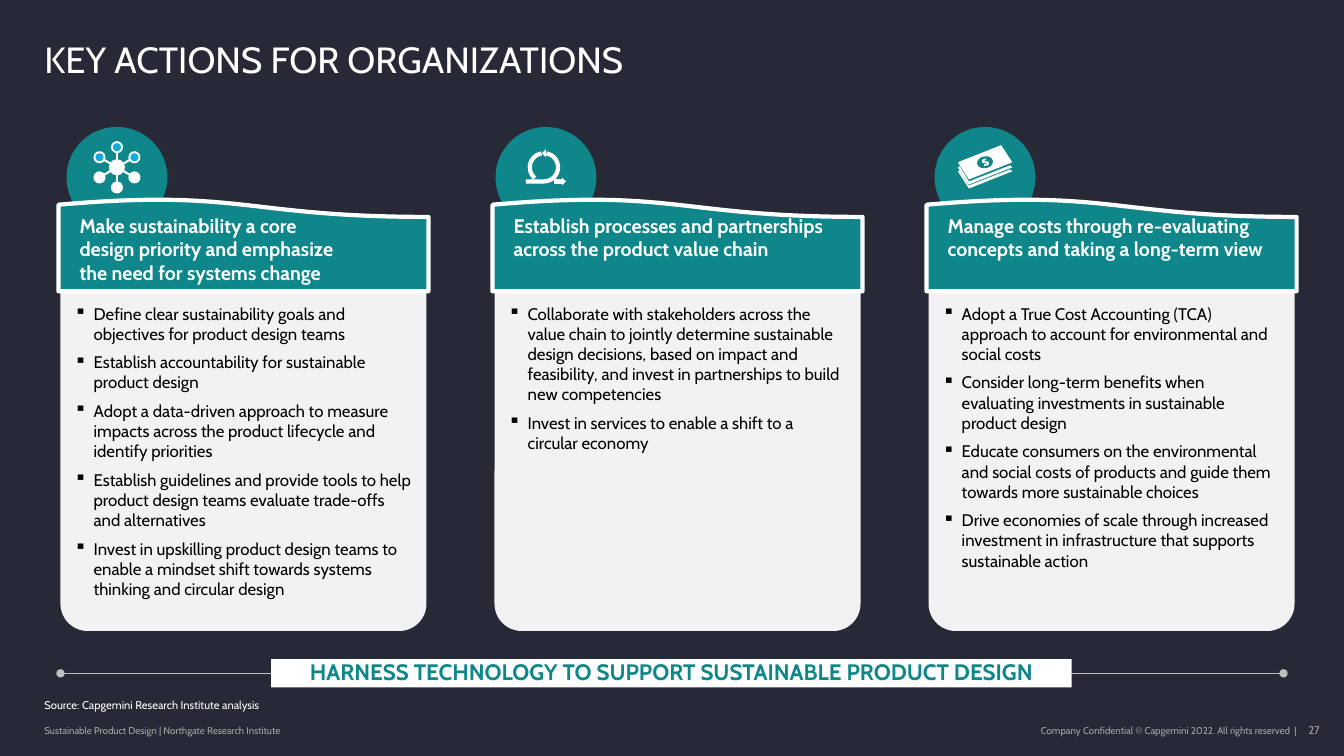
import math
from dataclasses import dataclass

from lxml import etree
from pptx import Presentation
from pptx.dml.color import RGBColor
from pptx.enum import shapes as kinds, text as txt
from pptx.oxml import ns
from pptx.util import Inches, Pt


@dataclass(frozen=True)
class Theme:
    """Colours, font and type sizes of the slide."""
    font: str = "Cabin"
    night: str = "272936"
    teal: str = "0F878A"
    sky: str = "12ABDB"
    white: str = "FFFFFF"
    panel: str = "F2F2F2"
    ink: str = "000000"
    rule: str = "BFBFBF"
    muted: str = "A6A6A6"
    title: int = 26
    banner: int = 16
    heading: int = 14
    body: int = 12
    small: int = 8
    footer: int = 7


THEME = Theme()
SHAPE, ALIGN, ANCHOR = kinds.MSO_SHAPE, txt.PP_ALIGN, txt.MSO_ANCHOR


def rgb(value):
    """Turn a hex string into a colour."""
    return RGBColor.from_string(value)


def paint(shape, fill=None, line=None, width=1):
    """Set the fill and outline of a shape and remove its shadow."""
    shape.shadow.inherit = False
    if fill:
        shape.fill.solid()
        shape.fill.fore_color.rgb = rgb(fill)
    else:
        shape.fill.background()
    if line:
        shape.line.color.rgb = rgb(line)
        shape.line.width = Pt(width)
    else:
        shape.line.fill.background()
    return shape


def preset(slide, kind, box, fill, line=None, width=1):
    """Add a painted preset shape in a box given in inches."""
    return paint(slide.shapes.add_shape(kind, *map(Inches, box)), fill, line, width)


def disc(slide, x, y, radius, fill):
    """Add a circle around a centre."""
    return preset(slide, SHAPE.OVAL, (x - radius, y - radius, 2 * radius, 2 * radius), fill)


def outline(slide, x, y, points, fill=None, line=None, width=1):
    """Add a filled polygon or an open stroke through points around a centre."""
    corners = [(Inches(x + dx), Inches(y + dy)) for dx, dy in points]
    builder = slide.shapes.build_freeform(*corners[0])
    builder.add_line_segments(corners[1:], close=fill is not None)
    return paint(builder.convert_to_shape(), fill, line, width)


def segment(slide, start, end, color, width):
    """Add a straight line without shadow."""
    line = slide.shapes.add_connector(
        kinds.MSO_CONNECTOR.STRAIGHT, *map(Inches, (*start, *end)))
    line.line.color.rgb = rgb(color)
    line.line.width = Pt(width)
    etree.SubElement(line._element.spPr, ns.qn("a:effectLst"))
    return line


def write(shape, paragraphs, size, color, bold=False, align=ALIGN.LEFT, anchor=ANCHOR.TOP,
          insets=(0, 0, 0, 0), spacing=None, after=0, bullet=None):
    """Fill a shape with paragraphs of one style."""
    frame = shape.text_frame
    frame.word_wrap = True
    frame.vertical_anchor = anchor
    (frame.margin_left, frame.margin_top,
     frame.margin_right, frame.margin_bottom) = map(Inches, insets)
    for index, content in enumerate(paragraphs):
        paragraph = frame.add_paragraph() if index else frame.paragraphs[0]
        paragraph.text = content
        paragraph.alignment = align
        paragraph.space_after = Pt(after)
        if spacing:
            paragraph.line_spacing = spacing
        if bullet:
            props = paragraph._p.get_or_add_pPr()
            props.set("marL", str(Inches(0.19)))
            props.set("indent", str(-Inches(0.19)))
            etree.SubElement(props, ns.qn("a:buChar")).set("char", bullet)
        font = paragraph.font
        font.name, font.size, font.bold = THEME.font, Pt(size), bold
        font.color.rgb = rgb(color)


def label(slide, box, paragraphs, size, color, **style):
    """Add a text box in a box given in inches."""
    write(slide.shapes.add_textbox(*map(Inches, box)), paragraphs, size, color, **style)


def network_icon(slide, x, y):
    """Draw a hub with six satellites, the upper three with a blue core."""
    for step in range(6):
        angle = math.radians(30 + 60 * step)
        node = x + 0.2 * math.cos(angle), y + 0.2 * math.sin(angle)
        segment(slide, (x, y), node, THEME.white, 1.5)
        disc(slide, *node, 0.06, THEME.white)
        if step >= 3:
            disc(slide, *node, 0.04, THEME.sky)
    disc(slide, x, y, 0.08, THEME.white)


def cycle_icon(slide, x, y):
    """Draw a loop with an arrow running out of its foot."""
    def arc(first, last):
        return [(0.14 * math.cos(math.radians(a)) - 0.02, 0.14 * math.sin(math.radians(a)))
                for a in range(first, last + 1, 10)]

    for stroke in (arc(130, 260), arc(-80, 90) + [(-0.2, 0.14)], [(0.08, 0.14), (0.16, 0.14)]):
        outline(slide, x, y, stroke, line=THEME.white, width=3)
    for tip, base, level in ((-0.04, 0, -0.14), (0.2, 0.16, 0.14)):
        head = [(tip, level), (base, level - 0.04), (base, level + 0.04)]
        outline(slide, x, y, head, fill=THEME.white)


def money_icon(slide, x, y):
    """Draw a tilted stack of banknotes."""
    note = [(0.16, -0.22), (0.27, -0.05), (-0.16, 0.12), (-0.27, -0.05)]
    edge = [(-0.27, 0), (-0.25, -0.01), (-0.16, 0.14), (0.25, -0.02), (0.27, 0), (-0.16, 0.17)]
    outline(slide, x, y, note, fill=THEME.white)
    for drop in (0, 0.04):
        outline(slide, x, y, [(dx, dy + drop) for dx, dy in edge], fill=THEME.white)
    coin = preset(slide, SHAPE.OVAL, (x - 0.08, y - 0.11, 0.16, 0.12), THEME.teal)
    coin.rotation = -10
    dollar = [(0.01, -0.08), (-0.02, -0.07), (-0.02, -0.05), (0.03, -0.05), (0.03, -0.03), (-0.01, -0.02)]
    outline(slide, x, y, dollar, line=THEME.white, width=1.25)


def action_card(slide, left, top, badge_offset, icon, heading, actions):
    """Draw one column: badge, panel with actions, wavy heading and icon."""
    center = left + badge_offset + 0.5, top + 0.5
    disc(slide, *center, 0.5, THEME.teal)
    panel = preset(slide, SHAPE.ROUND_2_SAME_RECTANGLE,
                   (left, top + 1.62, 3.63, 3.38), THEME.panel)
    panel.adjustments[0], panel.adjustments[1] = 0, 0.08
    label(slide, (left + 0.04, top + 1.7, 3.55, 3.2), actions, THEME.body, THEME.ink,
          insets=(0.1, 0.05, 0.1, 0.05), after=6, bullet="▪")
    wave = preset(slide, SHAPE.FLOWCHART_DOCUMENT,
                  (left - 0.02, top + 0.71, 3.67, 0.92), THEME.teal, THEME.white, 3)
    wave._element.spPr.find(ns.qn("a:xfrm")).set("flipV", "1")
    label(slide, (left + 0.09, top + 0.81, 3.52, 0.81), [heading], THEME.heading, THEME.white,
          bold=True, insets=(0.1, 0.05, 0.1, 0.05), after=6)
    icon(slide, center[0], center[1] - 0.1)


def banner(slide, left, top, width, message):
    """Draw the closing message on a rule with round ends."""
    rule = segment(slide, (left, top + 0.14), (left + width, top + 0.14), THEME.rule, 0.75)
    ends = rule.line._get_or_add_ln()
    for end in ("a:headEnd", "a:tailEnd"):
        etree.SubElement(ends, ns.qn(end)).set("type", "oval")
    plate = preset(slide, SHAPE.RECTANGLE, (left + 2.09, top, 7.94, 0.28), THEME.white)
    write(plate, [message], THEME.banner, THEME.teal, bold=True, align=ALIGN.CENTER,
          anchor=ANCHOR.MIDDLE, insets=(0.02,) * 4, spacing=0.9)


def footer(slide, left, top):
    """Write the source and the footer line."""
    label(slide, (left, top - 0.2, 12.46, 0.13), ["Source: Capgemini Research Institute analysis"],
          THEME.small, THEME.white, anchor=ANCHOR.BOTTOM)
    label(slide, (left, top, 3.73, 0.24), ["Sustainable Product Design | Northgate Research Institute"],
          THEME.footer, THEME.muted, anchor=ANCHOR.MIDDLE)
    label(slide, (left + 7.46, top, 4.96, 0.24),
          ["Company Confidential © Capgemini 2022. All rights reserved  |"],
          THEME.footer, THEME.muted, align=ALIGN.RIGHT, anchor=ANCHOR.MIDDLE)
    label(slide, (left + 12.4, top, 0.25, 0.24), ["27"], THEME.small, THEME.muted,
          align=ALIGN.RIGHT, insets=(0, 0.05, 0, 0.05))


CARDS = [
    (0.06, network_icon,
     "Make sustainability a core\vdesign priority and emphasize\vthe need for systems change",
     ["Define clear sustainability goals and objectives for product design teams",
      "Establish accountability for sustainable product design",
      "Adopt a data-driven approach to measure impacts across the product lifecycle and identify priorities",
      "Establish guidelines and provide tools to help product design teams evaluate trade-offs and alternatives",
      "Invest in upskilling product design teams to enable a mindset shift towards systems thinking and circular design"]),
    (0.01, cycle_icon, "Establish processes and partnerships across the product value chain",
     ["Collaborate with stakeholders across the value chain to jointly determine sustainable design decisions, "
      "based on impact and feasibility, and invest in partnerships to build new competencies",
      "Invest in services to enable a shift to a circular economy"]),
    (0.06, money_icon, "Manage costs through re-evaluating concepts and taking a long-term view",
     ["Adopt a True Cost Accounting (TCA) approach to account for environmental and social costs",
      "Consider long-term benefits when evaluating investments in sustainable product design",
      "Educate consumers on the environmental and social costs of products and guide them "
      "towards more sustainable choices",
      "Drive economies of scale through increased investment in infrastructure that supports sustainable action"]),
]


def main():
    """Build the slide and save it."""
    deck = Presentation()
    deck.slide_width, deck.slide_height = Inches(13.33), Inches(7.5)
    slide = deck.slides.add_slide(deck.slide_layouts[6])
    slide.background.fill.solid()
    slide.background.fill.fore_color.rgb = rgb(THEME.night)
    label(slide, (0.44, 0.42, 11.97, 0.78), ["KEY ACTIONS FOR ORGANIZATIONS"],
          THEME.title, THEME.white, spacing=0.9)
    for column, card in enumerate(CARDS):
        action_card(slide, 0.6 + column * 8.61 / 2, 1.26, *card)
    banner(slide, 0.6, 6.54, 12.13, "HARNESS TECHNOLOGY TO SUPPORT SUSTAINABLE PRODUCT DESIGN")
    footer(slide, 0.44, 7.13)
    deck.save("out.pptx")


if __name__ == "__main__":
    main()
